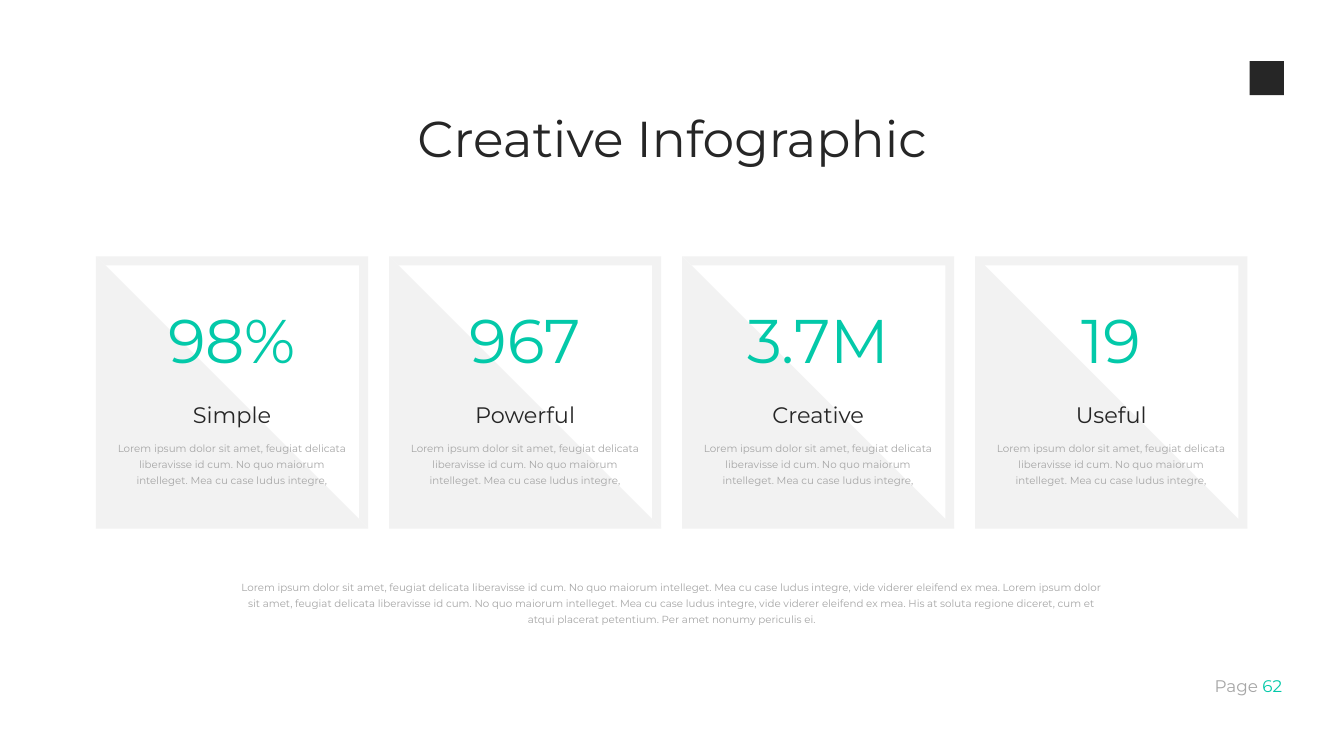
from dataclasses import dataclass

from pptx import Presentation
from pptx.dml.color import RGBColor
from pptx.enum.shapes import MSO_SHAPE
from pptx.enum.text import MSO_ANCHOR, MSO_AUTO_SIZE, PP_ALIGN
from pptx.util import Pt


@dataclass(frozen=True)
class Theme:
    font: str = "Montserrat"
    dark: str = "262626"
    accent: str = "03C9A9"
    gray: str = "A6A6A6"
    panel: str = "F2F2F2"
    title: int = 54
    value: int = 66
    head: int = 24
    page: int = 18
    body: int = 11


class Deck:
    def __init__(self, slide, theme):
        self.slide = slide
        self.theme = theme

    def style(self, para, size, color, align=PP_ALIGN.CENTER, before=0, line=None):
        para.alignment = align
        para.space_before = Pt(before)
        para.line_spacing = line
        para.font.name = self.theme.font
        para.font.size = Pt(size)
        para.font.color.rgb = RGBColor.from_string(color)

    def place(self, shape, x, y, w, h):
        shape.left, shape.top, shape.width, shape.height = map(Pt, (x, y, w, h))

    def paint(self, shape, color):
        shape.fill.solid()
        shape.fill.fore_color.rgb = RGBColor.from_string(color)
        shape.line.fill.background()
        shape.shadow.inherit = False

    def title(self, text, box):
        shape = self.slide.shapes.title
        self.place(shape, *box)
        frame = shape.text_frame
        frame.text = text
        frame.word_wrap = True
        frame.auto_size = MSO_AUTO_SIZE.NONE
        frame.vertical_anchor = MSO_ANCHOR.TOP
        self.style(frame.paragraphs[0], self.theme.title, self.theme.dark, before=6)

    def text(self, box, *items):
        """Each item is (text, size, color, style options)."""
        frame = self.slide.shapes.add_textbox(*map(Pt, box)).text_frame
        frame.word_wrap = True
        for i, (words, size, color, opts) in enumerate(items):
            para = frame.add_paragraph() if i else frame.paragraphs[0]
            para.add_run().text = words
            self.style(para, size, color, **opts)
        return frame

    def rect(self, box, color):
        shape = self.slide.shapes.add_shape(MSO_SHAPE.RECTANGLE, *map(Pt, box))
        self.paint(shape, color)

    def outline(self, group, x, y, points):
        start, *rest = [(Pt(x + dx), Pt(y + dy)) for dx, dy in points]
        pen = group.shapes.build_freeform(*start)
        pen.add_line_segments(rest, close=True)
        self.paint(pen.convert_to_shape(), self.theme.panel)

    def card(self, x, y, side, value, head, body):
        t = self.theme
        gap, band = 0.7, 9.5
        end = side - band
        group = self.slide.shapes.add_group_shape()
        # Lower-left half
        self.outline(group, x, y, [
            (0, 0), (gap, 0), (side, side - gap), (side, side), (0, side)])
        # Upper-right border
        self.outline(group, x, y, [
            (gap, 0), (side, 0), (side, side - gap),
            (end, end - gap), (end, band), (band + gap, band)])
        # Figure and caption, centred on the card
        self.text((x + 26.3, y + 45.5, 239, 87), (value, t.value, t.accent, {}))
        loose = dict(before=12, line=1.3)
        self.text((x + 13, y + 142.6, 265.6, 109.5),
                  (head, t.head, t.dark, loose), (body, t.body, t.gray, loose))

    def page(self, box, label, number):
        t = self.theme
        frame = self.text(box, (label, t.page, t.gray, dict(align=PP_ALIGN.RIGHT)))
        run = frame.paragraphs[0].add_run()
        run.text = number
        run.font.color.rgb = RGBColor.from_string(t.accent)


CARDS = [("98%", "Simple"), ("967", "Powerful"), ("3.7M", "Creative"), ("19", "Useful")]
LEAD = ("Lorem ipsum dolor sit amet, feugiat delicata liberavisse id cum. "
        "No quo maiorum intelleget. Mea cu case ludus integre,")
NOTE = (f"{LEAD} vide viderer eleifend ex mea. {LEAD} vide viderer eleifend ex mea. "
        "His at soluta regione diceret, cum et atqui placerat petentium. "
        "Per amet nonumy periculis ei.")


def main():
    prs = Presentation()
    prs.slide_width, prs.slide_height = Pt(1440), Pt(810)
    theme = Theme()
    deck = Deck(prs.slides.add_slide(prs.slide_layouts[5]), theme)

    # Page number and corner mark
    deck.page((1254.2, 720.7, 126.7, 29), "Page ", "62")
    deck.rect((1339, 65.5, 36.5, 36.5), theme.dark)

    # Title
    deck.title("Creative Infographic", (378, 110.9, 684, 73))

    # Row of cards
    for i, (value, head) in enumerate(CARDS):
        deck.card(102.8 + 314 * i, 274.8, 291.6, value, head, LEAD)

    # Closing note
    deck.text((249, 615, 942, 59),
              (NOTE, theme.body, theme.gray, dict(before=12, line=1.3)))

    prs.save("out.pptx")


if __name__ == "__main__":
    main()
